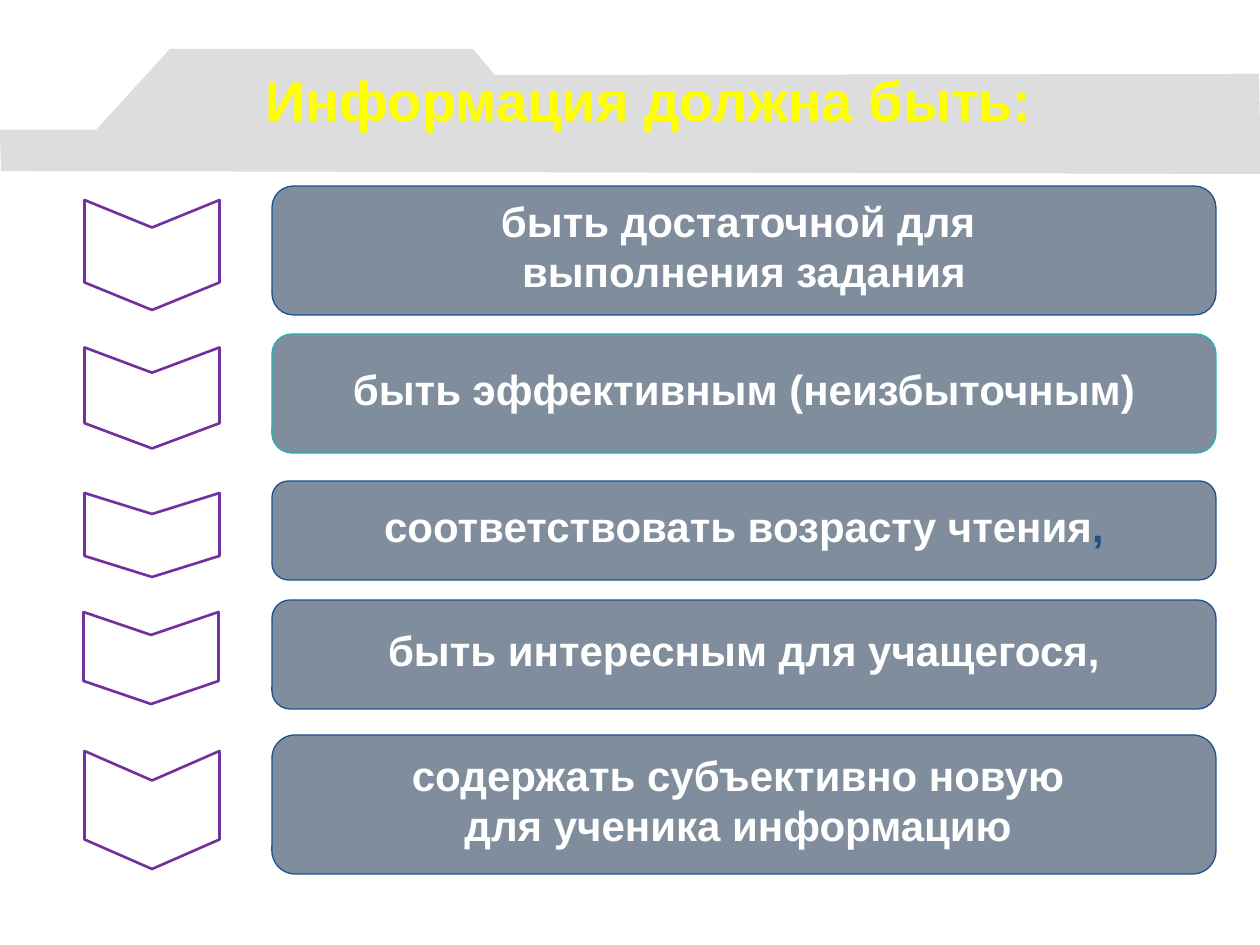
from dataclasses import dataclass

from lxml import etree
from pptx import Presentation
from pptx.dml.color import RGBColor
from pptx.enum.shapes import MSO_SHAPE
from pptx.enum.text import MSO_ANCHOR, PP_ALIGN
from pptx.oxml.ns import qn
from pptx.util import Emu, Pt

CHEVRON = MSO_SHAPE.CHEVRON
ROUNDED = MSO_SHAPE.ROUNDED_RECTANGLE
CENTER = PP_ALIGN.CENTER
TOP = MSO_ANCHOR.TOP
MIDDLE = MSO_ANCHOR.MIDDLE
PX_PER_INCH = 126
TITLE_ONLY = 5


@dataclass(frozen=True)
class Theme:
    font: str = "Arial"
    title_size: int = 32
    body_size: int = 24
    title: str = "FFFF00"
    white: str = "FFFFFF"
    banner: str = "DDDDDD"
    panel: str = "0F2946"
    panel_opacity: int = 53
    blue: str = "1D528D"
    teal: str = "25B1B1"
    purple: str = "7030A0"


def px(value):
    return Emu(round(value * 914400 / PX_PER_INCH))


def color(value):
    return RGBColor.from_string(value)


class SlideBuilder:
    def __init__(self, slide, theme):
        self.slide = slide
        self.theme = theme

    def style_font(self, font, size, value):
        font.name = self.theme.font
        font.size = Pt(size)
        font.bold = True
        font.color.rgb = color(value)

    def paint(self, shape, fill, line=None, width=0):
        shape.shadow.inherit = False
        shape.fill.solid()
        shape.fill.fore_color.rgb = color(fill)
        if line:
            shape.line.color.rgb = color(line)
            shape.line.width = Pt(width)
        else:
            shape.line.fill.background()

    def add_banner(self, points):
        builder = self.slide.shapes.build_freeform(*points[0], scale=px(1))
        builder.add_line_segments(points[1:], close=True)
        self.paint(builder.convert_to_shape(), self.theme.banner)

    def add_title(self, text, left, top, width, height):
        title = self.slide.shapes.title
        title.left, title.top, title.width, title.height = map(px, (left, top, width, height))
        self.slide.shapes._spTree.append(title._element)
        frame = title.text_frame
        frame.text = text
        frame.vertical_anchor = TOP
        paragraph = frame.paragraphs[0]
        paragraph.alignment = CENTER
        paragraph.line_spacing = 1.0
        paragraph.space_before = Pt(0)
        self.style_font(paragraph.font, self.theme.title_size, self.theme.title)

    def add_chevron(self, group, center_x, center_y, length, breadth):
        chevron = group.shapes.add_shape(
            CHEVRON, px(center_x - length / 2), px(center_y - breadth / 2), px(length), px(breadth))
        chevron.adjustments[0] = 0.25
        chevron.rotation = 90
        self.paint(chevron, self.theme.white, self.theme.purple, 1.5)

    def add_panel(self, group, left, top, width, height, line, lines):
        panel = group.shapes.add_shape(ROUNDED, px(left), px(top), px(width), px(height))
        panel.adjustments[0] = 0.167
        self.paint(panel, self.theme.panel, line, 0.75)
        fill_color = panel._element.spPr.find(qn("a:solidFill"))[0]
        etree.SubElement(fill_color, qn("a:alpha"), val=str(self.theme.panel_opacity * 1000))
        frame = panel.text_frame
        frame.word_wrap = False
        frame.vertical_anchor = MIDDLE
        for index, text in enumerate(lines):
            paragraph = frame.add_paragraph() if index else frame.paragraphs[0]
            paragraph.add_run().text = text
            paragraph.alignment = CENTER
            paragraph.line_spacing = 0.8
            paragraph.space_before = Pt(6 if index else 0)
            self.style_font(paragraph.font, self.theme.body_size, self.theme.white)
        return panel

    def add_colored_ending(self, panel, text, value):
        run = panel.text_frame.paragraphs[-1].add_run()
        run.text = text
        run.font.color.rgb = color(value)

    def add_row(self, chevron, top, height, line, lines):
        group = self.slide.shapes.add_group_shape()
        self.add_chevron(group, *chevron, breadth=135)
        return self.add_panel(group, 272, top, 944, height, line, lines)


def main():
    theme = Theme()
    presentation = Presentation()
    presentation.slide_width = px(1260)
    presentation.slide_height = px(945)
    slide = presentation.slides.add_slide(presentation.slide_layouts[TITLE_ONLY])
    builder = SlideBuilder(slide, theme)

    builder.add_banner([(0, 130), (96, 130), (170, 49), (473, 49),
                        (495, 75), (1259, 74), (1261, 174), (1, 171)])
    rows = [
        ((152, 255, 110), 186, 129, theme.blue,
         ["быть достаточной для ", "выполнения задания"], ""),
        ((152, 398, 101), 334, 119, theme.teal,
         ["быть эффективным (неизбыточным)"], ""),
        ((152, 535, 84), 481, 99, theme.blue,
         ["соответствовать возрасту чтения"], ","),
        ((151, 658, 92), 600, 109, theme.blue,
         ["быть интересным для учащегося,"], ""),
        ((152, 810, 118), 735, 139, theme.blue,
         ["содержать субъективно новую ", "для ученика информацию "], ""),
    ]
    for *row, ending in rows:
        panel = builder.add_row(*row)
        if ending:
            builder.add_colored_ending(panel, ending, theme.blue)
    builder.add_title("Информация должна быть:", 78, 59, 1142, 79)
    presentation.save("out.pptx")


if __name__ == "__main__":
    main()
